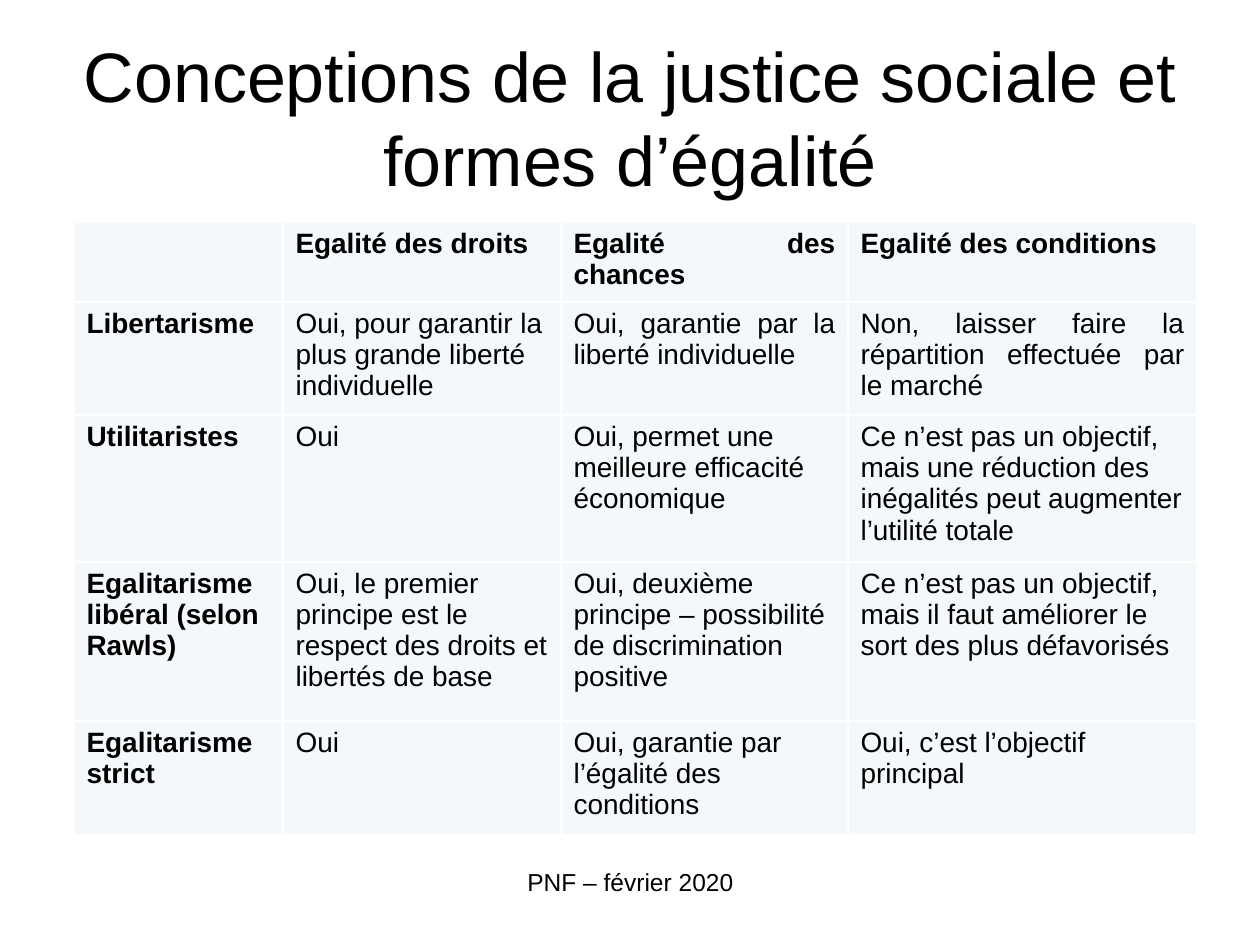
from lxml.etree import SubElement
from pptx import Presentation
from pptx.dml.color import RGBColor
from pptx.enum.text import MSO_ANCHOR, MSO_AUTO_SIZE, PP_ALIGN
from pptx.oxml.ns import qn
from pptx.util import Emu, Pt

COLORS = {"text": "000000", "cell": "F3F9FA", "border": "FFFFFF"}
FONT = "Arial"
COLS = [209, 278, 287, 349]
ROWS = [66, 63, 146, 159, 88]
CELLS = [
    ["", "Egalité des droits", "Egalité des chances", "Egalité des conditions"],
    ["Libertarisme",
     "Oui, pour garantir la plus grande liberté individuelle",
     "Oui, garantie par la liberté individuelle ",
     "Non, laisser faire la répartition effectuée par le marché"],
    ["Utilitaristes", "Oui",
     "Oui, permet une meilleure efficacité économique",
     "Ce n’est pas un objectif, mais une réduction des inégalités peut "
     "augmenter l’utilité totale"],
    ["Egalitarisme libéral (selon Rawls)",
     "Oui, le premier principe est le respect des droits et libertés de base",
     "Oui, deuxième principe – possibilité de discrimination positive",
     "Ce n’est pas un objectif, mais il faut améliorer le sort des plus "
     "défavorisés"],
    ["Egalitarisme strict", "Oui",
     "Oui, garantie par l’égalité des conditions",
     "Oui, c’est l’objectif principal"],
]
JUSTIFIED = {(0, 1), (0, 2), (1, 0), (1, 2), (1, 3), (2, 0), (4, 0)}


def px(n):
    """Turn slide pixels into EMU."""
    return Emu(round(n * 914400 / 126))


def rgb(name):
    """Look up a named colour."""
    return RGBColor.from_string(COLORS[name])


def write(tf, text, size, align, bold=False):
    """Put one formatted paragraph in a text frame."""
    tf.text = text
    p = tf.paragraphs[0]
    p.alignment = align
    p.font.name = FONT
    p.font.size = Pt(size)
    p.font.bold = bold
    p.font.color.rgb = rgb("text")
    end = SubElement(p._p, qn("a:endParaRPr"), sz=str(size * 100))
    SubElement(end, qn("a:latin"), typeface=FONT)
    return p


def add_title(s, text):
    """Fill and place the title placeholder."""
    sp = s.shapes.title
    sp.left, sp.top, sp.width, sp.height = px(63), px(38), px(1134), px(158)
    tf = sp.text_frame
    tf.auto_size = MSO_AUTO_SIZE.NONE
    tf.vertical_anchor = MSO_ANCHOR.MIDDLE
    write(tf, text, 40, PP_ALIGN.CENTER)


def add_footer(s, text):
    """Add the centred footer text."""
    sp = s.shapes.add_textbox(px(431), px(861), px(399), px(66))
    sp.text_frame.word_wrap = True
    write(sp.text_frame, text, 14, PP_ALIGN.CENTER)


def add_borders(cell):
    """Draw a thin line on all four sides of a cell."""
    tcPr = cell._tc.get_or_add_tcPr()
    for i, side in enumerate(("a:lnL", "a:lnR", "a:lnT", "a:lnB")):
        ln = tcPr.makeelement(qn(side), {"w": str(Pt(1))})
        fill = SubElement(ln, qn("a:solidFill"))
        SubElement(fill, qn("a:srgbClr"), val=COLORS["border"])
        tcPr.insert(i, ln)


def add_grid(s):
    """Add the comparison table."""
    shape = s.shapes.add_table(len(ROWS), len(COLS), px(74), px(222),
                               px(sum(COLS)), px(sum(ROWS)))
    table = shape.table
    for col, width in zip(table.columns, COLS):
        col.width = px(width)
    for row, height in zip(table.rows, ROWS):
        row.height = px(height)
    for i, texts in enumerate(CELLS):
        for j, text in enumerate(texts):
            cell = table.cell(i, j)
            cell.fill.solid()
            cell.fill.fore_color.rgb = rgb("cell")
            add_borders(cell)
            align = PP_ALIGN.JUSTIFY if (i, j) in JUSTIFIED else PP_ALIGN.LEFT
            p = write(cell.text_frame, text, 16, align, i == 0 or j == 0)
            p.space_before = Pt(12)


def main():
    """Build and save the slide."""
    prs = Presentation()
    prs.slide_width, prs.slide_height = px(1260), px(945)
    s = prs.slides.add_slide(prs.slide_layouts[5])
    add_footer(s, "PNF – février 2020")
    add_title(s, "Conceptions de la justice sociale et formes d’égalité")
    add_grid(s)
    prs.save("out.pptx")


if __name__ == "__main__":
    main()
